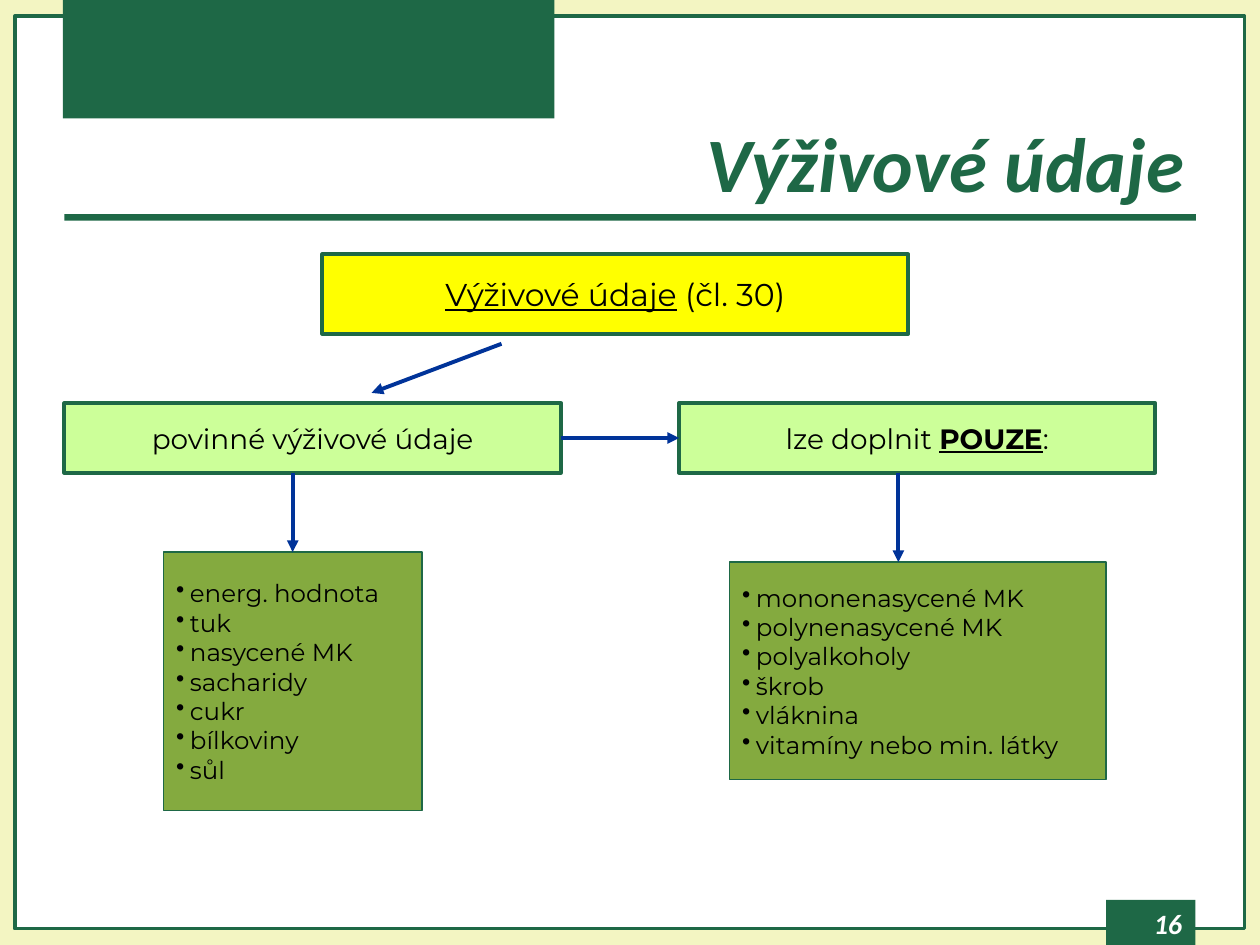
from dataclasses import dataclass

from lxml.etree import SubElement
from pptx import Presentation
from pptx.dml.color import RGBColor
from pptx.enum.shapes import MSO_CONNECTOR, MSO_SHAPE
from pptx.enum.text import MSO_ANCHOR, PP_ALIGN
from pptx.oxml.ns import qn
from pptx.util import Cm, Pt

COLORS = {
    "cream": "F3F5C2", "white": "FFFFFF", "black": "000000", "green": "1E6846",
    "yellow": "FFFF00", "mint": "CCFF99", "olive": "84AA3F", "blue": "003399",
}
BODY = {"name": "Montserrat"}
HEADING = {"name": "Calibri", "bold": True, "italic": True}
UNDERLINED = {"underline": True}
STRONG = {"underline": True, "bold": True}
BULLET_INDENT = Cm(0.28)


@dataclass
class Box:
    left: float
    top: float
    width: float
    height: float
    fill: str
    border: float = 0  # points

    @property
    def right(self) -> float:
        return self.left + self.width

    @property
    def bottom(self) -> float:
        return self.top + self.height

    @property
    def middle(self) -> float:
        return self.top + self.height / 2


@dataclass
class Run:
    text: str
    style: dict


def color(name: str) -> RGBColor:
    return RGBColor.from_string(COLORS[name])


def draw_box(slide, box: Box):
    shape = slide.shapes.add_shape(
        MSO_SHAPE.RECTANGLE, Cm(box.left), Cm(box.top), Cm(box.width), Cm(box.height))
    shape.shadow.inherit = False
    shape.fill.solid()
    shape.fill.fore_color.rgb = color(box.fill)
    if box.border:
        shape.line.color.rgb = color("green")
        shape.line.width = Pt(box.border)
    else:
        shape.line.fill.background()
    return shape


def write_runs(paragraph, runs: list[Run], size: float, ink: str) -> None:
    for part in runs:
        run = paragraph.add_run()
        run.text = part.text
        for attribute, value in {**part.style, "size": Pt(size)}.items():
            setattr(run.font, attribute, value)
        run.font.color.rgb = color(ink)


def draw_label(slide, box: Box, size: float, runs: list[Run]) -> None:
    frame = draw_box(slide, box).text_frame
    frame.vertical_anchor = MSO_ANCHOR.MIDDLE
    frame.paragraphs[0].alignment = PP_ALIGN.CENTER
    write_runs(frame.paragraphs[0], runs, size, "black")


def draw_list(slide, box: Box, items: list[str]) -> None:
    frame = draw_box(slide, box).text_frame
    frame.vertical_anchor = MSO_ANCHOR.MIDDLE
    for index, item in enumerate(items):
        paragraph = frame.add_paragraph() if index else frame.paragraphs[0]
        paragraph.alignment = PP_ALIGN.LEFT
        properties = paragraph._p.get_or_add_pPr()
        properties.set("marL", str(BULLET_INDENT))
        properties.set("indent", str(-BULLET_INDENT))
        SubElement(properties, qn("a:buChar"), char="•")
        write_runs(paragraph, [Run(item, BODY)], 14, "black")


def draw_heading(slide, left: float, top: float, width: float, height: float,
                 text: str, size: float, ink: str) -> None:
    frame = slide.shapes.add_textbox(Cm(left), Cm(top), Cm(width), Cm(height)).text_frame
    frame.word_wrap = True
    frame.vertical_anchor = MSO_ANCHOR.BOTTOM
    frame.paragraphs[0].alignment = PP_ALIGN.RIGHT
    write_runs(frame.paragraphs[0], [Run(text, HEADING)], size, ink)


def draw_arrow(slide, x1: float, y1: float, x2: float, y2: float) -> None:
    arrow = slide.shapes.add_connector(
        MSO_CONNECTOR.STRAIGHT, Cm(x1), Cm(y1), Cm(x2), Cm(y2))
    arrow.line.color.rgb = color("blue")
    arrow.line.width = Pt(2.25)
    SubElement(arrow.line._get_or_add_ln(), qn("a:tailEnd"), type="triangle")
    SubElement(arrow._element.spPr, qn("a:effectLst"))


def main() -> None:
    presentation = Presentation()
    presentation.slide_width, presentation.slide_height = Cm(25.4), Cm(19.05)
    slide = presentation.slides.add_slide(presentation.slide_layouts[6])
    slide.background.fill.solid()
    slide.background.fill.fore_color.rgb = color("cream")

    # Frame, page number block, title rule and top band
    for decoration in (
        Box(0.3, 0.33, 24.79, 18.39, "white", 2.25),
        Box(22.3, 18.14, 1.8, 0.91, "green"),
        Box(1.3, 4.32, 22.81, 0.13, "green"),
        Box(1.27, 0, 9.91, 2.39, "green"),
    ):
        draw_box(slide, decoration)
    draw_heading(slide, 21.69, 18.14, 2.39, 0.94, "16", 16, "white")
    draw_heading(slide, 1.27, 0.76, 22.86, 3.56, "Výživové údaje", 44, "green")

    # Labels of the diagram
    topic = Box(6.5, 5.13, 11.81, 1.6, "yellow", 2.25)
    mandatory = Box(1.3, 8.13, 10.01, 1.4, "mint", 2.25)
    optional = Box(13.69, 8.13, 9.6, 1.4, "mint", 2.25)
    draw_label(slide, topic, 18, [
        Run("Výživové údaje", BODY | UNDERLINED), Run(" (čl. 30)", BODY)])
    draw_label(slide, mandatory, 16, [Run("povinné výživové údaje", BODY)])
    draw_label(slide, optional, 16, [
        Run("lze doplnit ", BODY), Run("POUZE", BODY | STRONG), Run(":", BODY)])

    # Lists of nutrients
    mandatory_list = Box(3.3, 11.13, 5.21, 5.21, "olive", 0.75)
    optional_list = Box(14.71, 11.33, 7.59, 4.39, "olive", 0.75)
    draw_list(slide, mandatory_list, [
        "energ. hodnota", "tuk", "nasycené MK", "sacharidy", "cukr", "bílkoviny", "sůl"])
    draw_list(slide, optional_list, [
        "mononenasycené MK", "polynenasycené MK", "polyalkoholy", "škrob", "vláknina",
        "vitamíny nebo min. látky"])

    # Arrows
    draw_arrow(slide, 10.11, 6.93, 7.49, 7.92)
    draw_arrow(slide, mandatory.right, mandatory.middle, optional.left, optional.middle)
    for x, label, nutrients in ((5.9, mandatory, mandatory_list),
                                (18.11, optional, optional_list)):
        draw_arrow(slide, x, label.bottom, x, nutrients.top)

    presentation.save("out.pptx")


if __name__ == "__main__":
    main()
